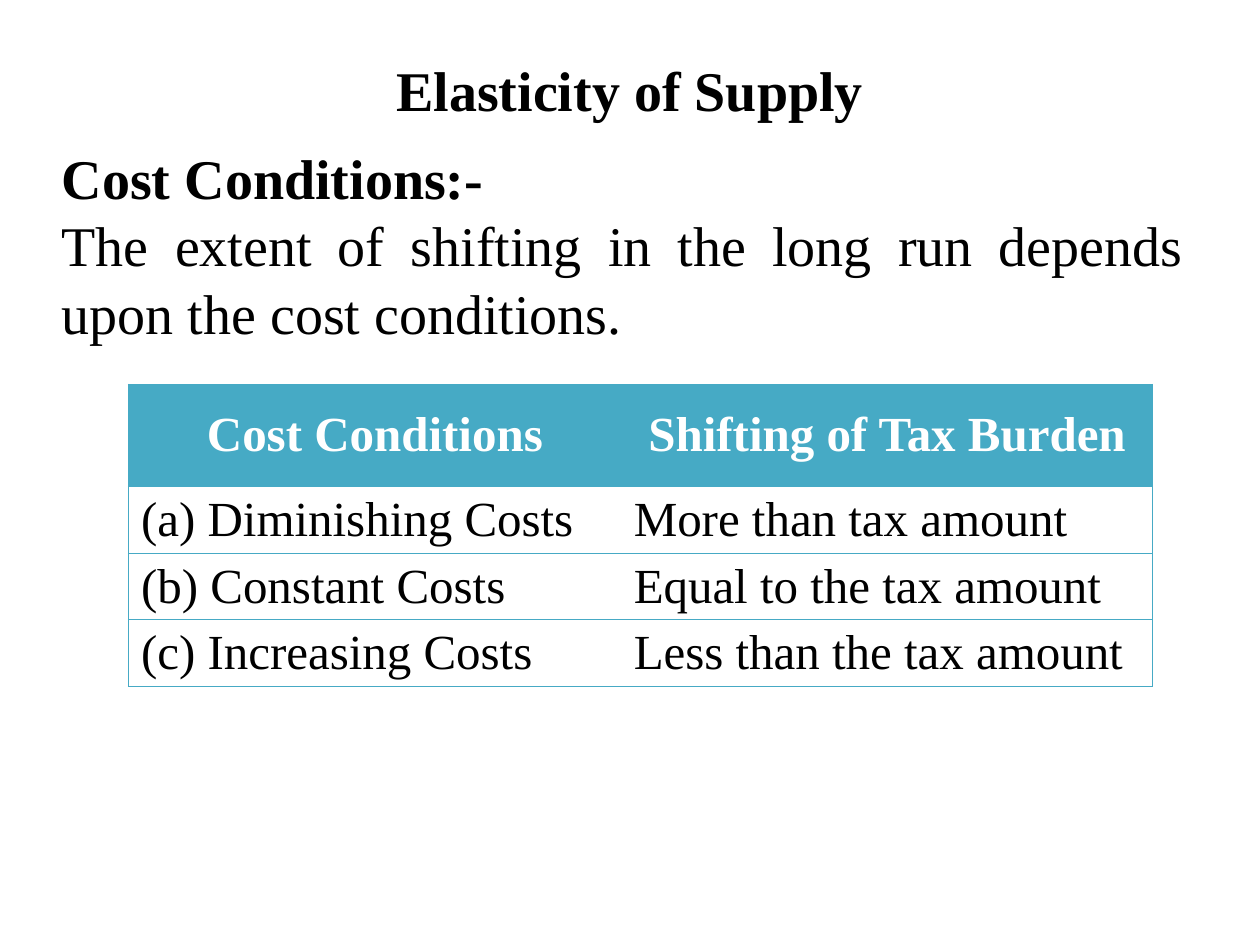
"""Build a slide on cost conditions and the shifting of the tax burden."""
import pptx
import pptx.dml.color
import pptx.enum.text
import pptx.oxml
import pptx.oxml.ns
import pptx.util

Inches = pptx.util.Inches
RGB = pptx.dml.color.RGBColor
ALIGN = pptx.enum.text.PP_ALIGN
ANCHOR = pptx.enum.text.MSO_ANCHOR

BLACK = RGB(0x00, 0x00, 0x00)
WHITE = RGB(0xFF, 0xFF, 0xFF)
TEAL = RGB(0x46, 0xAA, 0xC5)
FONT = "Times New Roman"
NS = pptx.oxml.ns.nsdecls("a")

ROWS = [
    ("Cost Conditions", "Shifting of Tax Burden"),
    ("(a) Diminishing Costs", "More than tax amount"),
    ("(b) Constant Costs", "Equal to the tax amount"),
    ("(c) Increasing Costs", "Less than the tax amount"),
]


def write(para, text, size=32, color=BLACK, bold=False, align=ALIGN.JUSTIFY):
    """Put formatted text in a paragraph."""
    para.alignment = align
    para.space_before = pptx.util.Pt(0)
    run = para.add_run()
    run.text = text
    run.font.name = FONT
    run.font.size = pptx.util.Pt(size)
    run.font.bold = bold
    run.font.color.rgb = color


def edge(cell, side, color=None):
    """Draw one cell border, or clear it when no colour is given."""
    fill = "<a:noFill/>"
    if color is not None:
        fill = f'<a:solidFill><a:srgbClr val="{color}"/></a:solidFill>'
    line = pptx.oxml.parse_xml(f'<a:ln{side} {NS} w="9525">{fill}</a:ln{side}>')
    cell._tc.get_or_add_tcPr().append(line)


class Deck:
    """Hold the style and the current slide."""

    def __init__(self):
        """Start a deck with one title and body slide."""
        self.prs = pptx.Presentation()
        self.prs.slide_width = Inches(10)
        self.prs.slide_height = Inches(7.5)
        self.slide = self.prs.slides.add_slide(self.prs.slide_layouts[1])

    def place(self, shape, left, top, width, height):
        """Move a placeholder and return its text frame."""
        shape.left, shape.top = Inches(left), Inches(top)
        shape.width, shape.height = Inches(width), Inches(height)
        frame = shape.text_frame
        frame.word_wrap = True
        frame.auto_size = pptx.enum.text.MSO_AUTO_SIZE.NONE
        return frame

    def title(self, text, *box):
        """Fill the title."""
        frame = self.place(self.slide.shapes.title, *box)
        frame.vertical_anchor = ANCHOR.MIDDLE
        write(frame.paragraphs[0], text, bold=True, align=ALIGN.CENTER)

    def body(self, head, text, *box):
        """Fill the body with a bold heading and plain text."""
        frame = self.place(self.slide.placeholders[1], *box)
        write(frame.paragraphs[0], head, bold=True)
        write(frame.add_paragraph(), text)
        for para in frame.paragraphs:
            props = para._p.get_or_add_pPr()
            props.set("marL", "0")
            props.set("indent", "0")
            props.append(pptx.oxml.parse_xml(f"<a:buNone {NS}/>"))

    def table(self, rows, left, top, widths, heights):
        """Add a table with a filled header row."""
        grid = self.slide.shapes.add_table(
            len(rows), len(widths), Inches(left), Inches(top),
            Inches(sum(widths)), Inches(sum(heights))).table
        grid.horz_banding = False
        for col, width in zip(grid.columns, widths):
            col.width = Inches(width)
        for row, height in zip(grid.rows, heights):
            row.height = Inches(height)
        last = len(widths) - 1
        for r, row in enumerate(rows):
            for c, text in enumerate(row):
                self.cell(grid.cell(r, c), text, r == 0, c == 0, c == last)

    def cell(self, cell, text, head, first, last):
        """Format one table cell."""
        cell.vertical_anchor = ANCHOR.MIDDLE
        cell.margin_top = cell.margin_bottom = Inches(0.02)
        edge(cell, "L", TEAL if first else None)
        edge(cell, "R", TEAL if last else None)
        edge(cell, "T", TEAL)
        edge(cell, "B", TEAL)
        cell.fill.solid()
        cell.fill.fore_color.rgb = TEAL if head else WHITE
        write(cell.text_frame.paragraphs[0], text, size=28, bold=head,
              color=WHITE if head else BLACK,
              align=ALIGN.CENTER if head else ALIGN.JUSTIFY)


def main():
    """Build and save the slide."""
    deck = Deck()
    deck.title("Elasticity of Supply", 0.5, 0.16, 9, 1.09)
    deck.body("Cost Conditions:-",
              "The extent of shifting in the long run depends upon "
              "the cost conditions.", 0.39, 1.09, 9.11, 6.09)
    deck.table(ROWS, 1.02, 3.05, [3.91, 4.22], [0.81] + [0.53] * 3)
    deck.prs.save("out.pptx")


if __name__ == "__main__":
    main()
